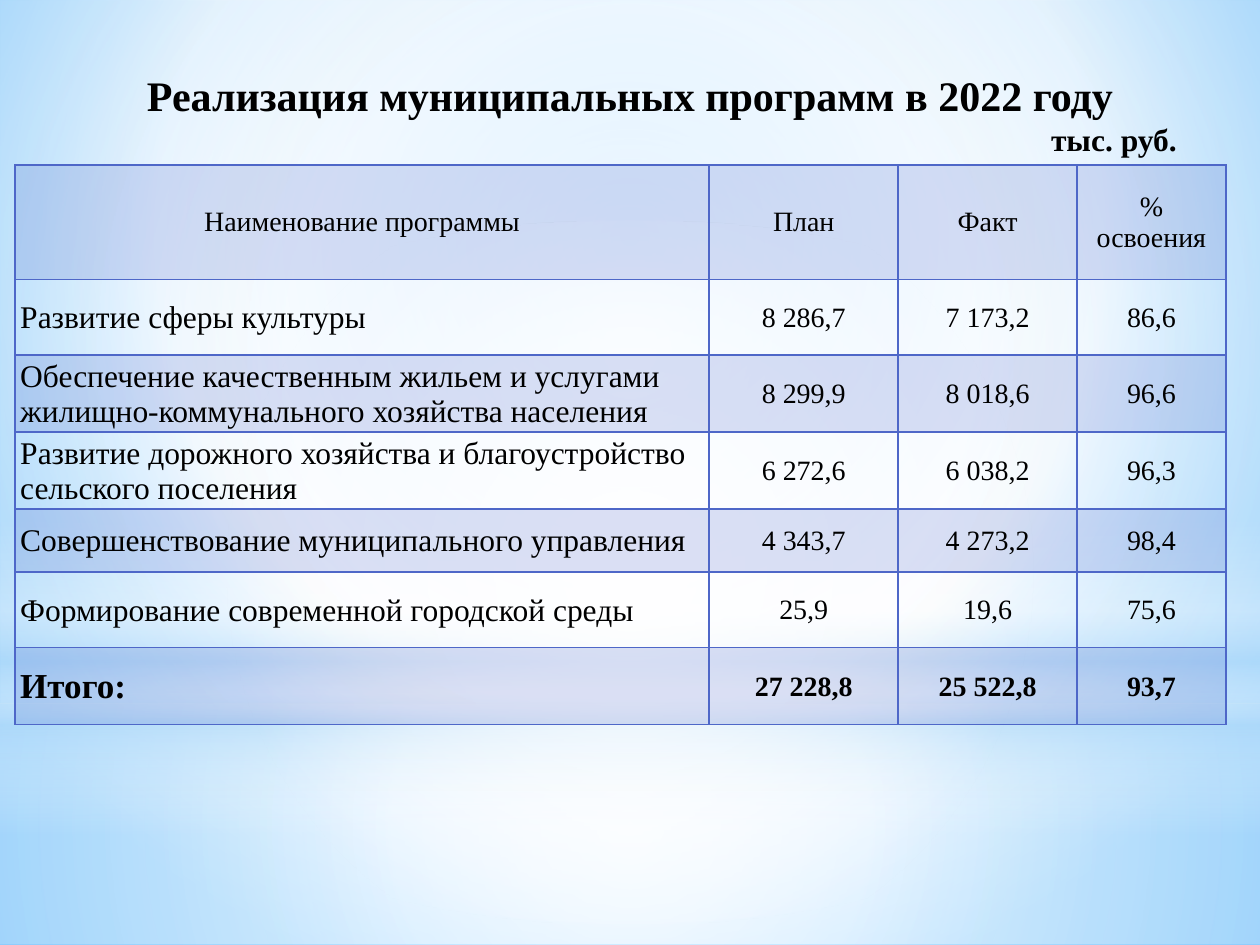
from dataclasses import dataclass

from lxml.etree import SubElement
from pptx import Presentation
from pptx.dml.color import RGBColor
from pptx.enum.shapes import MSO_SHAPE
from pptx.enum.text import MSO_ANCHOR, PP_ALIGN
from pptx.oxml.ns import qn
from pptx.util import Pt


@dataclass(frozen=True)
class Theme:
    """Colours, font and type sizes of the slide."""
    font: str = "Times New Roman"
    ink: str = "000000"
    accent: str = "4E67C8"
    white: str = "FFFFFF"
    haze: str = "B4DCFA"
    sky: str = "9ED5FF"
    deep_sky: str = "5BB9FF"
    band_opacity: int = 20
    title: int = 24
    total: int = 20
    label: int = 18
    figure: int = 16


THEME = Theme()
CENTRE = (50, 50, 50, 50)
COLUMNS = (396.7, 108, 102.2, 85)
ROWS = (65.5, 43.2, 33.1, 33.1, 36, 43.2, 44)
PROGRAMMES = (
    ("Наименование программы", "План", "Факт", "% освоения"),
    ("Развитие сферы культуры", "8 286,7", "7 173,2", "86,6"),
    ("Обеспечение качественным жильем и услугами жилищно-коммунального хозяйства населения",
     "8 299,9", "8 018,6", "96,6"),
    ("Развитие дорожного хозяйства и благоустройство сельского поселения",
     "6 272,6", "6 038,2", "96,3"),
    ("Совершенствование муниципального управления", "4 343,7", "4 273,2", "98,4"),
    ("Формирование современной городской среды", "25,9", "19,6", "75,6"),
    ("Итого:", "27 228,8", "25 522,8", "93,7"),
)


def add_colour(parent, colour, opacity=100):
    """Add an RGB colour with an opacity in percent."""
    tint = SubElement(parent, qn("a:srgbClr"), val=colour)
    if opacity < 100:
        SubElement(tint, qn("a:alpha"), val=str(opacity * 1000))


def set_gradient(properties, old_fill, stops, focus=None):
    """Replace a fill by a circular gradient, or a vertical one without focus."""
    gradient = properties.makeelement(qn("a:gradFill"), {"rotWithShape": "1"})
    stop_list = SubElement(gradient, qn("a:gsLst"))
    for position, colour, opacity in stops:
        stop = SubElement(stop_list, qn("a:gs"), pos=str(position * 1000))
        add_colour(stop, colour, opacity)
    if focus:
        circle = SubElement(gradient, qn("a:path"), {"path": "circle"})
        edges = {side: str(share * 1000) for side, share in zip("ltrb", focus)}
        SubElement(circle, qn("a:fillToRect"), edges)
    else:
        SubElement(gradient, qn("a:lin"), ang="5400000", scaled="0")
    properties.replace(properties.find(qn(old_fill)), gradient)


def add_glow(page, kind, box, stops, focus=None):
    """Place one translucent gradient shape in its box."""
    glow = page.shapes.add_shape(kind, *map(Pt, box))
    glow.shadow.inherit = False
    glow.line.fill.background()
    glow.fill.background()
    set_gradient(glow.element.spPr, "a:noFill", stops, focus)


def add_backdrop(page, box):
    """Paint the sky background and its layers of light."""
    left, top, width, height = box
    white, haze = THEME.white, THEME.haze
    page.background.fill.solid()
    set_gradient(page.element.find(".//" + qn("p:bgPr")), "a:solidFill",
                 ((0, THEME.sky, 100), (60, white, 100), (100, THEME.deep_sky, 100)),
                 (20, 10, 20, 60))
    horizon = 402
    add_glow(page, MSO_SHAPE.RECTANGLE, (left, top + horizon, width, height - horizon),
             ((0, white, 91), (37, white, 76), (100, haze, 79)), CENTRE)
    add_glow(page, MSO_SHAPE.RECTANGLE, (left, top, width, horizon),
             ((0, white, 89), (48, white, 62), (100, haze, 79)), CENTRE)
    add_glow(page, MSO_SHAPE.RECTANGLE, (left, top + 297, width, 180),
             ((0, white, 0), (29, white, 30), (45, haze, 40),
              (55, white, 26), (65, haze, 60), (100, white, 0)))
    add_glow(page, MSO_SHAPE.OVAL, (left, top + 126, width, horizon),
             ((0, white, 100), (56, white, 0)), CENTRE)


def write(para, text, size, alignment, bold=False):
    """Write one run in a paragraph."""
    para.alignment = alignment
    span = para.add_run()
    span.text = text
    span.font.name = THEME.font
    span.font.size = Pt(size)
    span.font.bold = bold
    span.font.color.rgb = RGBColor.from_string(THEME.ink)


def set_margins(holder, left, top, right, bottom):
    """Set the four inner margins of a cell or text frame."""
    holder.margin_left, holder.margin_top = Pt(left), Pt(top)
    holder.margin_right, holder.margin_bottom = Pt(right), Pt(bottom)


def add_heading(page, box):
    """Write the title and the unit of measure below it."""
    frame = page.shapes.add_textbox(*map(Pt, box)).text_frame
    frame.word_wrap = True
    set_margins(frame, 8, 6, 8, 0)
    write(frame.paragraphs[0], "Реализация муниципальных программ в 2022 году",
          THEME.title, PP_ALIGN.CENTER, True)
    write(frame.add_paragraph(), "тыс. руб.", THEME.label, PP_ALIGN.RIGHT, True)


def style_cell(cell, banded):
    """Give a cell its borders and its band colour."""
    properties = cell._tc.get_or_add_tcPr()
    for side in "LRTB":
        border = SubElement(properties, qn(f"a:ln{side}"), w=str(Pt(1)))
        add_colour(SubElement(border, qn("a:solidFill")), THEME.accent)
    if banded:
        band = SubElement(properties, qn("a:solidFill"))
        add_colour(band, THEME.accent, THEME.band_opacity)
    else:
        cell.fill.background()


def add_programme_table(page, box):
    """Build the table of planned and actual spending."""
    frame = page.shapes.add_table(len(ROWS), len(COLUMNS), *map(Pt, box))
    table = frame.table
    table.first_row = table.horz_banding = False
    for column, width in zip(table.columns, COLUMNS):
        column.width = Pt(width)
    last = len(ROWS) - 1
    for row, (height, texts) in enumerate(zip(ROWS, PROGRAMMES)):
        table.rows[row].height = Pt(height)
        for column, text in enumerate(texts):
            cell = table.cell(row, column)
            is_label = row > 0 and column == 0
            size = THEME.figure
            if is_label:
                size = THEME.total if row == last else THEME.label
            if row == 0:
                set_margins(cell, 7.2, 3.6, 7.2, 3.6)
            else:
                set_margins(cell, 3 if is_label else 0.7, 0.7, 0.7, 0)
            cell.vertical_anchor = MSO_ANCHOR.MIDDLE
            style_cell(cell, row % 2 == 0)
            write(cell.text_frame.paragraphs[0], text, size,
                  PP_ALIGN.LEFT if is_label else PP_ALIGN.CENTER, row == last)


def main():
    """Build and save the deck."""
    deck = Presentation()
    deck.slide_width, deck.slide_height = Pt(720), Pt(540)
    page = deck.slides.add_slide(deck.slide_layouts[6])
    add_backdrop(page, (0, 0, 720, 540))
    add_heading(page, (39.5, 34, 641, 56))
    add_programme_table(page, (8.6, 94.3, sum(COLUMNS), sum(ROWS)))
    deck.save("out.pptx")


if __name__ == "__main__":
    main()
